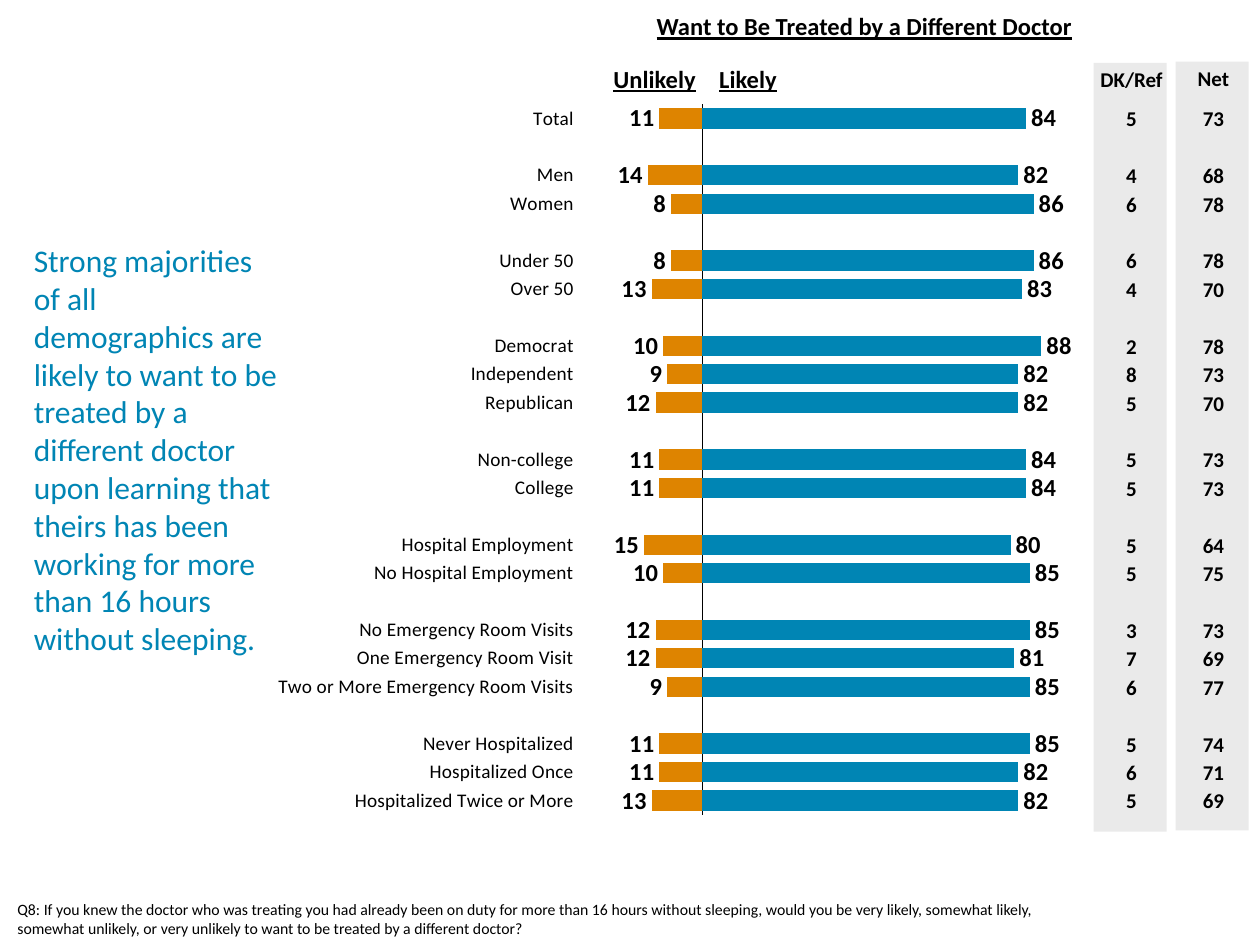
from copy import deepcopy

from pptx import Presentation
from pptx.chart.data import CategoryChartData
from pptx.dml.color import RGBColor
from pptx.enum.chart import XL_CHART_TYPE, XL_LABEL_POSITION, XL_TICK_LABEL_POSITION, XL_TICK_MARK
from pptx.enum.shapes import MSO_SHAPE
from pptx.enum.text import MSO_ANCHOR, PP_ALIGN
from pptx.oxml import parse_xml
from pptx.oxml.ns import nsdecls, qn
from pptx.util import Inches, Pt

COLORS = {"likely": "0085B4", "unlikely": "DE8400", "panel": "EAEAEA", "text": "000000"}
FONT = "Calibri"

TAKEAWAY = ("Strong majorities of all demographics are likely to want to be treated by a "
            "different doctor upon learning that theirs has been working for more than "
            "16 hours without sleeping.")
QUESTION = ("Q8: If you knew the doctor who was treating you had already been on duty for more "
            "than 16 hours without sleeping, would you be very likely, somewhat likely, somewhat "
            "unlikely, or very unlikely to want to be treated by a different doctor?")

# label, unlikely, likely, DK/Ref, net
GROUPS = [
    [("Total", 11, 84, 5, 73)],
    [("Men", 14, 82, 4, 68), ("Women", 8, 86, 6, 78)],
    [("Under 50", 8, 86, 6, 78), ("Over 50", 13, 83, 4, 70)],
    [("Democrat", 10, 88, 2, 78), ("Independent", 9, 82, 8, 73), ("Republican", 12, 82, 5, 70)],
    [("Non-college", 11, 84, 5, 73), ("College", 11, 84, 5, 73)],
    [("Hospital Employment", 15, 80, 5, 64), ("No Hospital Employment", 10, 85, 5, 75)],
    [("No Emergency Room Visits", 12, 85, 3, 73), ("One Emergency Room Visit", 12, 81, 7, 69),
     ("Two or More Emergency Room Visits", 9, 85, 6, 77)],
    [("Never Hospitalized", 11, 85, 5, 74), ("Hospitalized Once", 11, 82, 6, 71),
     ("Hospitalized Twice or More", 13, 82, 5, 69)],
]
SPACER = ("", None, None, None, None)
ROWS = [row for group in GROUPS for row in group + [SPACER]][:-1]

# header, column in ROWS, left, top
PANELS = [("DK/Ref", 3, 8.68, 0.5), ("Net", 4, 9.33, 0.49)]
PANEL_W, PANEL_H, VALUE_H = 0.58, 6.1, 0.2

CHART = (1.67, 0.25, 7, 6.35)
PLOT = {"x": 0.426, "y": 0.091, "w": 0.547, "h": 0.888}
ROW_H = CHART[3] * PLOT["h"] / len(ROWS)
FIRST_ROW_TOP = CHART[1] + CHART[3] * PLOT["y"]


def rgb(name):
    return RGBColor.from_string(COLORS[name])


def style(font, size, color="text", bold=False, underline=False):
    font.name, font.size, font.bold = FONT, Pt(size), bold
    font.color.rgb = rgb(color)
    if underline:
        font.underline = True


def add_text(slide, text, box, size, align=PP_ALIGN.LEFT, inset=True,
             anchor=MSO_ANCHOR.TOP, **look):
    tf = slide.shapes.add_textbox(*map(Inches, box)).text_frame
    tf.word_wrap = True
    tf.vertical_anchor = anchor
    if not inset:
        tf.margin_left = tf.margin_right = tf.margin_top = tf.margin_bottom = 0
    p = tf.paragraphs[0]
    p.text = text
    p.alignment = align
    style(p.font, size, **look)


def set_plot_layout(area):
    """Fix the inner plot area so bars line up with the value columns."""
    for old in area.findall(qn("c:layout")):
        area.remove(old)
    modes = "".join(f'<c:{k}Mode val="edge"/>' for k in "xy")
    sizes = "".join(f'<c:{k} val="{v}"/>' for k, v in PLOT.items())
    area.insert(0, parse_xml(
        f'<c:layout {nsdecls("c")}><c:manualLayout><c:layoutTarget val="inner"/>'
        f'{modes}{sizes}</c:manualLayout></c:layout>'))


def move_last_series_to_second_axis(area):
    """Give the last series its own bar plot on hidden axes with the same scale."""
    first = area.find(qn("c:barChart"))
    second = deepcopy(first)
    first.remove(first.findall(qn("c:ser"))[-1])
    second.remove(second.find(qn("c:ser")))
    first.addnext(second)
    cat, val = area.find(qn("c:catAx")), area.find(qn("c:valAx"))
    cat2, val2 = deepcopy(cat), deepcopy(val)
    val.addnext(val2)
    val2.addnext(cat2)
    cat2.find(qn("c:delete")).set("val", "1")
    new_ids = {cat.find(qn("c:axId")).get("val"): "50010",
               val.find(qn("c:axId")).get("val"): "50020"}
    for part in (second, cat2, val2):
        for ref in part.findall(qn("c:axId")) + part.findall(qn("c:crossAx")):
            ref.set("val", new_ids[ref.get("val")])


def add_bars(slide):
    data = CategoryChartData()
    data.categories = [row[0] for row in ROWS]
    data.add_series("Series 1", [None if row[1] is None else -row[1] for row in ROWS])
    data.add_series("Series 2", [row[2] for row in ROWS])
    chart = slide.shapes.add_chart(
        XL_CHART_TYPE.BAR_CLUSTERED, *map(Inches, CHART), data).chart
    chart.has_legend = chart.has_title = False
    style(chart.font, 11)

    cat = chart.category_axis
    cat.visible = True
    cat.reverse_order = True
    cat.tick_label_position = XL_TICK_LABEL_POSITION.LOW
    cat.major_tick_mark = cat.minor_tick_mark = XL_TICK_MARK.NONE
    cat.has_major_gridlines = False
    style(cat.tick_labels.font, 11)
    cat.format.line.color.rgb = rgb("text")
    cat.format.line.width = Pt(0.29)

    val = chart.value_axis
    val.minimum_scale, val.maximum_scale = -30, 95
    val.has_major_gridlines = False
    val.visible = False

    plot = chart.plots[0]
    plot.gap_width, plot.overlap, plot.vary_by_categories = 40, 100, False
    for series, color in zip(plot.series, ("unlikely", "likely")):
        series.invert_if_negative = False
        series.format.fill.solid()
        series.format.fill.fore_color.rgb = rgb(color)
        labels = series.data_labels
        labels.show_value = True
        labels.position = XL_LABEL_POSITION.OUTSIDE_END
        labels.number_format = "#,##0_);[Black]General" if color == "unlikely" else "General"
        labels.number_format_is_linked = False
        style(labels.font, 14, bold=True)

    area = chart._chartSpace.chart.plotArea
    set_plot_layout(area)
    move_last_series_to_second_axis(area)


def add_panel(slide, header, column, left, top):
    s = slide.shapes.add_shape(
        MSO_SHAPE.RECTANGLE, *map(Inches, (left, top, PANEL_W, PANEL_H)))
    s.shadow.inherit = False
    s.fill.solid()
    s.fill.fore_color.rgb = rgb("panel")
    s.line.fill.background()
    cells = [(header, top + 0.03)]
    for i, row in enumerate(ROWS):
        if row[column] is not None:
            cells.append((str(row[column]), FIRST_ROW_TOP + (i + 0.5) * ROW_H - VALUE_H / 2))
    for text, y in cells:
        add_text(slide, text, (left + 0.01, y, PANEL_W, VALUE_H), 12,
                 PP_ALIGN.CENTER, inset=False, bold=True)


def main():
    prs = Presentation()
    prs.slide_width, prs.slide_height = Inches(10), Inches(7.5)
    slide = prs.slides.add_slide(prs.slide_layouts[6])
    add_text(slide, TAKEAWAY, (0.17, 0.33, 2.16, 6.47), 18,
             anchor=MSO_ANCHOR.MIDDLE, color="likely")
    add_bars(slide)
    for panel in PANELS:
        add_panel(slide, *panel)
    heading = {"bold": True, "underline": True}
    add_text(slide, "Want to Be Treated by a Different Doctor", (3.06, 0.04, 7.6, 0.34), 14,
             PP_ALIGN.CENTER, **heading)
    for text, left in (("Unlikely", 4.77), ("Likely", 5.61)):
        add_text(slide, text, (left, 0.46, 0.94, 0.34), 14, **heading)
    add_text(slide, QUESTION, (0.04, 7.09, 8.67, 0.4), 9)
    prs.save("out.pptx")


if __name__ == "__main__":
    main()
